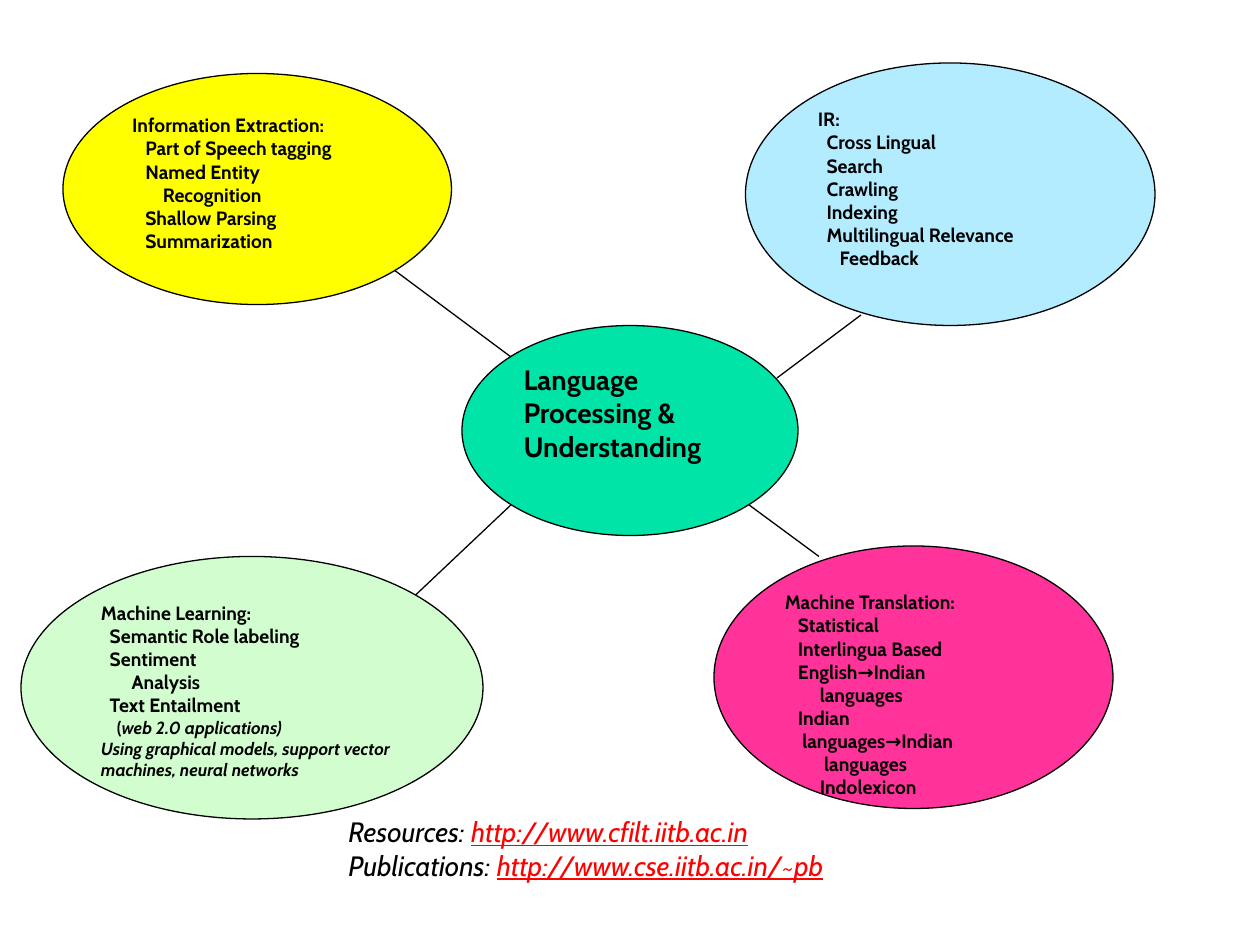
from pptx import Presentation
from pptx.dml.color import RGBColor
from pptx.enum import shapes, text
from pptx.util import Pt
from lxml import etree

COLORS = {
    "ink": "000000", "link": "FF0000", "core": "00E4A8", "extraction": "FFFF00",
    "learning": "D2FDCF", "retrieval": "B3EBFF", "translation": "FF3399",
}
FONT = "Cabin"
DRAWING_NS = "http://schemas.openxmlformats.org/drawingml/2006/main"

# Each topic: colour, box (left, top, width, height), font size, (indent, text) lines
TOPICS = [
    ("core", (264, 186, 192, 120), 16, [
        (0, "Language"), (0, "Processing & Understanding")]),
    ("extraction", (36, 42, 222, 132), 11, [
        (0, "Information Extraction:"), (7.5, "Part of Speech tagging"),
        (7.5, "Named Entity"), (17.5, "Recognition"),
        (7.5, "Shallow Parsing"), (7.5, "Summarization")]),
    ("learning", (12, 318, 264, 150), 11, [
        (0, "Machine Learning:"), (5, "Semantic Role labeling"),
        (5, "Sentiment"), (17.5, "Analysis"), (5, "Text Entailment")]),
    ("retrieval", (426, 36, 234, 150), 11, [
        (0, "IR:"), (5, "Cross Lingual"), (5, "Search"), (5, "Crawling"),
        (5, "Indexing"), (5, "Multilingual Relevance"), (12.5, "Feedback")]),
    ("translation", (408, 312, 228, 150), 11, [
        (0, "Machine Translation:"), (7.5, "Statistical"),
        (7.5, "Interlingua Based"), (7.5, "English→Indian"), (20, "languages"),
        (7.5, "Indian"), (10, "languages→Indian"), (22.5, "languages"),
        (20, "Indolexicon")]),
]
SPOKES = [
    (225.5, 154.5, 292, 204), (237.5, 340, 292, 288.5),
    (492, 180, 444, 216), (428, 288.5, 468, 318),
]
LINKS = [
    ("Resources: ", "http://www.cfilt.iitb.ac.in"),
    ("Publications: ", "http://www.cse.iitb.ac.in/~pb"),
]


def rgb(name):
    return RGBColor.from_string(COLORS[name])


def add_line(frame, size, indent=0):
    """Return the next paragraph of the frame, styled and indented."""
    line = frame.paragraphs[0]
    if line.runs:
        line = frame.add_paragraph()
    line.alignment = text.PP_ALIGN.LEFT
    line.font.name = FONT
    line.font.size = Pt(size)
    line.font.color.rgb = rgb("ink")
    if indent:
        line._p.get_or_add_pPr().set("marL", str(Pt(indent)))
    return line


prs = Presentation()
prs.slide_width, prs.slide_height = Pt(720), Pt(540)
slide = prs.slides.add_slide(prs.slide_layouts[6])

# Topic ellipses
frames = {}
for name, box, size, lines in TOPICS:
    topic = slide.shapes.add_shape(shapes.MSO_SHAPE.OVAL, *map(Pt, box))
    topic.shadow.inherit = False
    topic.fill.solid()
    topic.fill.fore_color.rgb = rgb(name)
    topic.line.color.rgb = rgb("ink")
    topic.line.width = Pt(0.75)
    frame = frames[name] = topic.text_frame
    frame.word_wrap = True
    frame.vertical_anchor = text.MSO_ANCHOR.TOP
    for indent, wording in lines:
        line = add_line(frame, size, indent)
        line.font.bold = True
        line.add_run().text = wording

# Smaller, slanted closing lines under Machine Learning
applications = add_line(frames["learning"], 10, 9)
applications.font.bold = True
applications.add_run().text = "("
web = applications.add_run()
web.text = "web 2.0 applications)"
web.font.italic = True
methods = add_line(frames["learning"], 10)
methods.font.bold = methods.font.italic = True
methods.add_run().text = "Using graphical models, support vector machines, neural networks"

# Spokes from the topics to the core
for ends in SPOKES:
    spoke = slide.shapes.add_connector(shapes.MSO_CONNECTOR.STRAIGHT, *map(Pt, ends))
    spoke.line.color.rgb = rgb("ink")
    spoke.line.width = Pt(0.75)
    etree.SubElement(spoke._element.spPr, f"{{{DRAWING_NS}}}effectLst")

# Web addresses
addresses = slide.shapes.add_textbox(Pt(192), Pt(462), Pt(325.5), Pt(46)).text_frame
addresses.word_wrap = True
for label, url in LINKS:
    line = add_line(addresses, 16)
    line.font.italic = True
    line.add_run().text = label
    address = line.add_run()
    address.text = url
    address.font.underline = True
    address.font.color.rgb = rgb("link")

prs.save("out.pptx")
